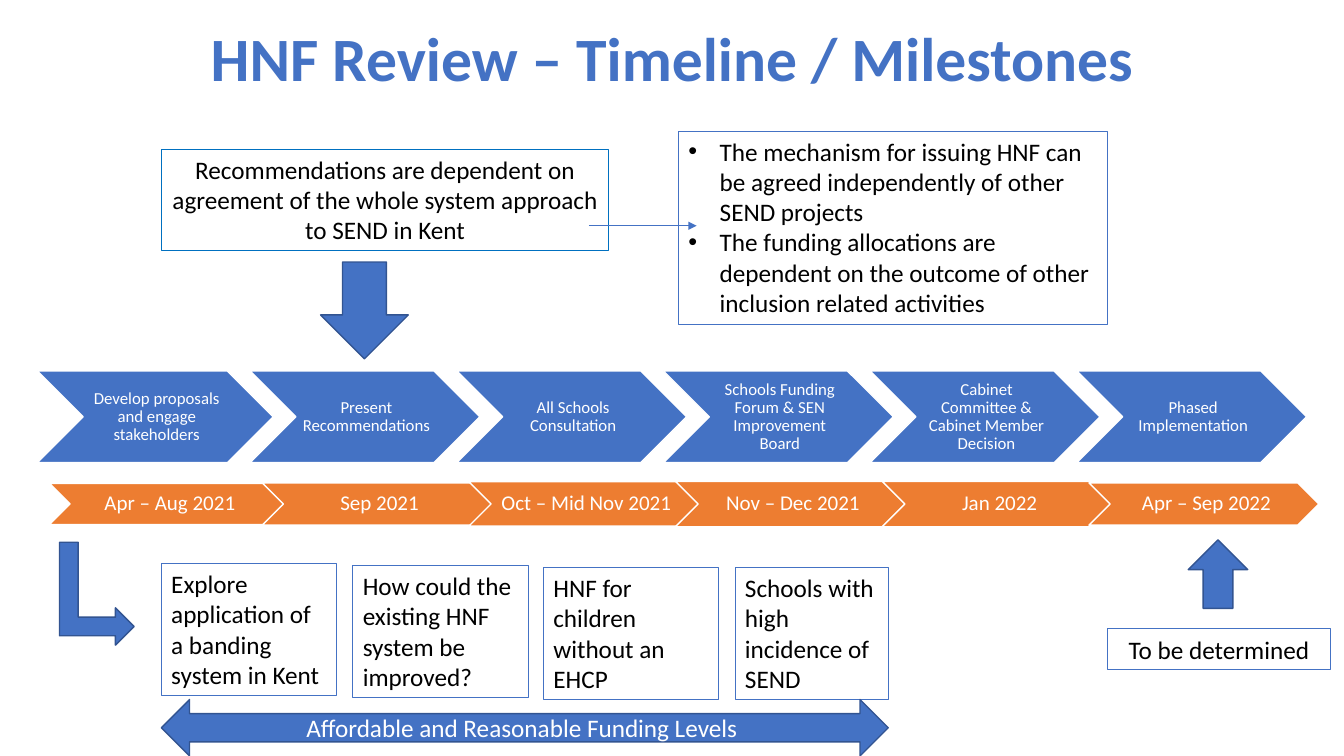
"""Build the HNF review timeline and milestones slide."""
from dataclasses import dataclass

from lxml.etree import SubElement
from pptx import Presentation
from pptx.dml.color import RGBColor
from pptx.enum.shapes import MSO_CONNECTOR, MSO_SHAPE
from pptx.enum.text import MSO_ANCHOR, MSO_AUTO_SIZE, PP_ALIGN
from pptx.oxml.ns import qn
from pptx.shapes.autoshape import Shape
from pptx.slide import Slide
from pptx.text.text import TextFrame
from pptx.util import Inches, Pt


@dataclass(frozen=True)
class Theme:
    font: str = "Calibri"
    blue: RGBColor = RGBColor(0x44, 0x72, 0xC4)
    dark_blue: RGBColor = RGBColor(0x32, 0x54, 0x91)
    bright_blue: RGBColor = RGBColor(0x00, 0x70, 0xC0)
    orange: RGBColor = RGBColor(0xED, 0x7D, 0x31)
    white: RGBColor = RGBColor(0xFF, 0xFF, 0xFF)
    black: RGBColor = RGBColor(0x00, 0x00, 0x00)
    title_size: int = 44
    body_size: int = 18
    date_size: int = 15
    stage_size: int = 12


THEME = Theme()


@dataclass(frozen=True)
class Area:
    left: float
    top: float
    width: float
    height: float

    def lengths(self) -> list[int]:
        return [Inches(n) for n in (self.left, self.top, self.width, self.height)]


@dataclass(frozen=True)
class Milestone:
    stage: str
    date: str
    date_height: float


@dataclass(frozen=True)
class Note:
    area: Area
    paragraphs: tuple[str, ...]
    align: PP_ALIGN = PP_ALIGN.LEFT
    outline: RGBColor = THEME.blue
    bulleted: bool = False


@dataclass(frozen=True)
class BlockArrow:
    kind: MSO_SHAPE
    area: Area
    rotation: int = 0
    label: str = ""


MILESTONES = (
    Milestone("Develop proposals and engage stakeholders", "Apr – Aug 2021", 0.41),
    Milestone("Present Recommendations", "Sep 2021", 0.42),
    Milestone("All Schools Consultation", "Oct – Mid Nov 2021", 0.44),
    Milestone("Schools Funding Forum & SEN Improvement Board", "Nov – Dec 2021", 0.45),
    Milestone("Cabinet Committee & Cabinet Member Decision", "Jan 2022", 0.45),
    Milestone("Phased Implementation", "Apr – Sep 2022", 0.42),
)
PITCH, CHEVRON_WIDTH, FIRST_EXTRA = 2.05, 2.28, 0.06
STAGE_LEFT, STAGE_MIDDLE, STAGE_HEIGHT = 0.43, 4.135, 0.91
DATE_LEFT, DATE_MIDDLE = 0.55, 5.0

NOTES = (
    Note(Area(1.6, 1.48, 4.44, 1.01),
         ("Recommendations are dependent on agreement of the whole system approach to SEND in Kent",),
         PP_ALIGN.CENTER, THEME.bright_blue),
    Note(Area(6.73, 1.3, 4.25, 1.92),
         ("The mechanism for issuing HNF can be agreed independently of other SEND projects",
          "The funding allocations are dependent on the outcome of other inclusion related activities"),
         bulleted=True),
    Note(Area(10.98, 6.24, 2.22, 0.4), ("To be determined",), PP_ALIGN.CENTER),
    Note(Area(1.6, 5.59, 1.74, 1.31), ("Explore application of a banding system in Kent",)),
    Note(Area(3.5, 5.61, 1.74, 1.31), ("How could the existing HNF system be improved?",)),
    Note(Area(5.39, 5.63, 1.74, 1.31), ("HNF for children without an EHCP",)),
    Note(Area(7.29, 5.63, 1.52, 1.31), ("Schools with high incidence of SEND",)),
)
BLOCK_ARROWS = (
    BlockArrow(MSO_SHAPE.DOWN_ARROW, Area(3.18, 2.6, 0.87, 0.96)),
    BlockArrow(MSO_SHAPE.RIGHT_ARROW, Area(11.74, 5.4, 0.68, 0.59), 270),
    BlockArrow(MSO_SHAPE.BENT_UP_ARROW, Area(0.45, 5.52, 1.02, 0.74), 90),
    BlockArrow(MSO_SHAPE.LEFT_RIGHT_ARROW, Area(1.6, 6.94, 7.21, 0.56),
               label="Affordable and Reasonable Funding Levels "),
)


def write(frame: TextFrame, paragraphs: tuple[str, ...], size: int, color: RGBColor,
          align: PP_ALIGN = PP_ALIGN.CENTER, spacing: float = 1.0, bold: bool = False) -> None:
    frame.word_wrap = True
    frame.text = "\n".join(paragraphs)
    for paragraph in frame.paragraphs:
        paragraph.alignment = align
        paragraph.line_spacing = spacing
        paragraph.font.name = THEME.font
        paragraph.font.size = Pt(size)
        paragraph.font.bold = bold
        paragraph.font.color.rgb = color


def add_filled(slide: Slide, kind: MSO_SHAPE, area: Area, fill: RGBColor, outline: RGBColor) -> Shape:
    shape = slide.shapes.add_shape(kind, *area.lengths())
    shape.shadow.inherit = False
    shape.fill.solid()
    shape.fill.fore_color.rgb = fill
    shape.line.color.rgb = outline
    shape.line.width = Pt(1)
    return shape


def add_chevron(slide: Slide, index: int, row_left: float, middle: float, height: float,
                text: str, size: int, fill: RGBColor, inset: float) -> None:
    extra = 0 if index else FIRST_EXTRA
    area = Area(row_left + index * PITCH - extra, middle - height / 2, CHEVRON_WIDTH + extra, height)
    frame = add_filled(slide, MSO_SHAPE.CHEVRON, area, fill, THEME.white).text_frame
    frame.margin_left = Inches(inset)
    frame.margin_top = frame.margin_right = frame.margin_bottom = Inches(0.02)
    write(frame, (text,), size, THEME.white, spacing=0.9)


def add_note(slide: Slide, note: Note) -> None:
    box = slide.shapes.add_shape(MSO_SHAPE.RECTANGLE, *note.area.lengths())
    box.shadow.inherit = False
    box.fill.background()
    box.line.color.rgb = note.outline
    box.line.width = Pt(0.75)
    frame = box.text_frame
    frame.vertical_anchor = MSO_ANCHOR.TOP
    frame.auto_size = MSO_AUTO_SIZE.SHAPE_TO_FIT_TEXT
    write(frame, note.paragraphs, THEME.body_size, THEME.black, note.align)
    if note.bulleted:
        for paragraph in frame.paragraphs:
            add_bullet(paragraph._p.get_or_add_pPr())


def add_bullet(properties) -> None:
    indent = Inches(0.31)
    properties.set("marL", str(indent))
    properties.set("indent", str(-indent))
    bullet_font = properties.makeelement(qn("a:buFont"), {"typeface": "Arial"})
    bullet = properties.makeelement(qn("a:buChar"), {"char": "•"})
    defaults = properties.find(qn("a:defRPr"))
    defaults.addprevious(bullet_font)
    defaults.addprevious(bullet)


def add_block_arrow(slide: Slide, arrow: BlockArrow) -> None:
    shape = add_filled(slide, arrow.kind, arrow.area, THEME.blue, THEME.dark_blue)
    shape.rotation = arrow.rotation
    if arrow.label:
        write(shape.text_frame, (arrow.label,), THEME.body_size, THEME.white)


def add_link(slide: Slide, start: float, end: float, level: float) -> None:
    link = slide.shapes.add_connector(
        MSO_CONNECTOR.STRAIGHT, Inches(start), Inches(level), Inches(end), Inches(level))
    link.line.color.rgb = THEME.blue
    link.line.width = Pt(0.5)
    SubElement(link.line._get_or_add_ln(), qn("a:tailEnd"), type="triangle")
    SubElement(link._element.spPr, qn("a:effectLst"))


def main() -> None:
    deck = Presentation()
    deck.slide_width, deck.slide_height = Inches(13.33), Inches(7.5)
    slide = deck.slides.add_slide(deck.slide_layouts[5])
    title = slide.shapes.title
    title.left, title.top, title.width, title.height = Area(0.92, -0.11, 11.5, 1.45).lengths()
    title.text_frame.vertical_anchor = MSO_ANCHOR.MIDDLE
    write(title.text_frame, ("HNF Review – Timeline / Milestones",), THEME.title_size, THEME.blue,
          spacing=0.9, bold=True)
    for index, milestone in enumerate(MILESTONES):
        add_chevron(slide, index, STAGE_LEFT, STAGE_MIDDLE, STAGE_HEIGHT,
                    milestone.stage, THEME.stage_size, THEME.blue, 0.05)
        add_chevron(slide, index, DATE_LEFT, DATE_MIDDLE, milestone.date_height,
                    milestone.date, THEME.date_size, THEME.orange, 0.07)
    for note in NOTES:
        add_note(slide, note)
    add_link(slide, 5.84, 6.91, 2.24)
    for arrow in BLOCK_ARROWS:
        add_block_arrow(slide, arrow)
    deck.save("out.pptx")


if __name__ == "__main__":
    main()
